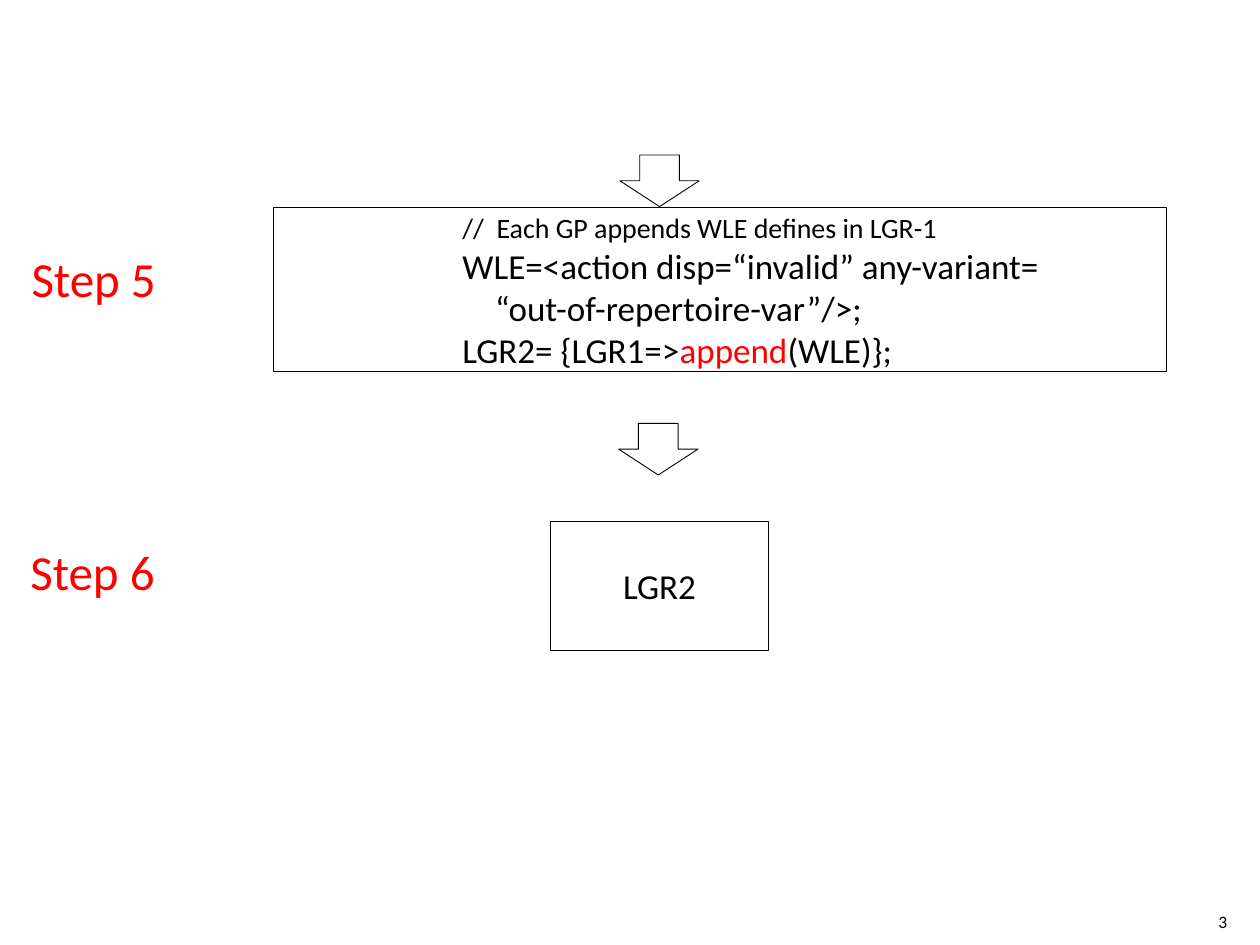
from pptx import Presentation
from pptx.dml.color import RGBColor
from pptx.enum.shapes import MSO_SHAPE
from pptx.enum.text import MSO_ANCHOR, PP_ALIGN
from pptx.util import Inches, Pt

RECT, DOWN_ARROW = MSO_SHAPE.RECTANGLE, MSO_SHAPE.DOWN_ARROW
TOP, MIDDLE = MSO_ANCHOR.TOP, MSO_ANCHOR.MIDDLE
LEFT, CENTER = PP_ALIGN.LEFT, PP_ALIGN.CENTER

COLORS = {"text": "000000", "accent": "FF0000", "line": "000000"}
FONT = "Calibri"
LINE_WIDTH = 0.5
CONTINUATION_INDENT = 0.26

OUTLINES = [
    (RECT, (2.17, 1.65, 7.09, 1.3)),
    (DOWN_ARROW, (4.92, 1.23, 0.63, 0.41)),
    (DOWN_ARROW, (4.91, 3.36, 0.63, 0.41)),
]
RESULT = ("LGR2", (4.37, 4.14, 1.73, 1.02))

STEPS = [
    ("Step 5", (0.21, 1.97, 1.08, 0.47)),
    ("Step 6", (0.2, 4.3, 1.08, 0.47)),
]
COMMENT = ("//  Each GP appends WLE defines in LGR-1", (3.63, 1.67, 3.89, 0.27))
CODE_BOX = (3.63, 1.94, 4.82, 1.01)
CODE = [
    (0, [("WLE=<action disp=“invalid” any-variant=", "text")]),
    (CONTINUATION_INDENT, [("“out-of-repertoire-var”/>;", "text")]),
    (0, [("LGR2= {LGR1=>", "text"), ("append", "accent"), ("(WLE)};", "text")]),
]
PAGE_NUMBER = ("3", (9.49, 7.17, 0.43, 0.29))


def rgb(name):
    return RGBColor.from_string(COLORS[name])


def one_line(text, color="text"):
    return [(0, [(text, color)])]


def write(holder, lines, size, align=LEFT, anchor=TOP, side=0.04, wrap=False):
    frame = holder.text_frame
    layout = {
        "margin_left": Inches(side),
        "margin_right": Inches(side),
        "margin_top": 0,
        "margin_bottom": 0,
        "vertical_anchor": anchor,
        "word_wrap": wrap,
    }
    for attribute, value in layout.items():
        setattr(frame, attribute, value)
    for number, (indent, runs) in enumerate(lines):
        paragraph = frame.add_paragraph() if number else frame.paragraphs[0]
        paragraph.alignment = align
        if indent:
            paragraph._p.get_or_add_pPr().set("marL", str(Inches(indent)))
        for text, color in runs:
            run = paragraph.add_run()
            run.text = text
            for attribute, value in {"name": FONT, "size": Pt(size)}.items():
                setattr(run.font, attribute, value)
            run.font.color.rgb = rgb(color)


def add_outline(slide, kind, box):
    outline = slide.shapes.add_shape(kind, *map(Inches, box))
    outline.shadow.inherit = False
    outline.fill.background()
    outline.line.color.rgb = rgb("line")
    outline.line.width = Pt(LINE_WIDTH)
    return outline


def add_text(slide, box, lines, size, **layout):
    write(slide.shapes.add_textbox(*map(Inches, box)), lines, size, **layout)


def main():
    deck = Presentation()
    deck.slide_width, deck.slide_height = Inches(10), Inches(7.5)
    slide = deck.slides.add_slide(deck.slide_layouts[6])
    centered = {"align": CENTER, "anchor": MIDDLE, "wrap": True}

    for kind, box in OUTLINES:
        add_outline(slide, kind, box)
    result, box = RESULT
    write(add_outline(slide, RECT, box), one_line(result), 20, **centered)

    for step, box in STEPS:
        add_text(slide, box, one_line(step, "accent"), 28)
    comment, box = COMMENT
    add_text(slide, box, one_line(comment), 16)
    add_text(slide, CODE_BOX, CODE, 20)
    number, box = PAGE_NUMBER
    add_text(slide, box, one_line(number), 10, side=0, **centered)

    deck.save("out.pptx")


if __name__ == "__main__":
    main()
